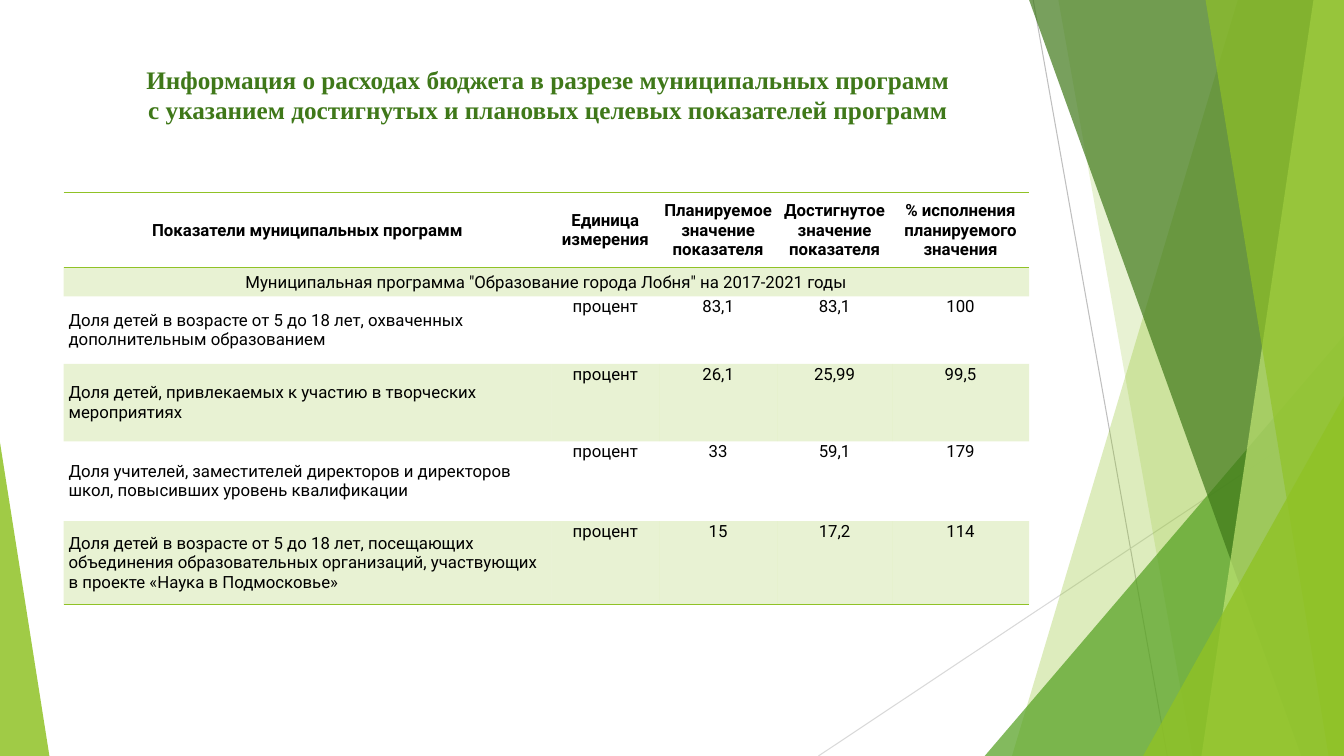
from dataclasses import dataclass

from lxml import etree
from pptx import Presentation
from pptx.dml.color import RGBColor
from pptx.enum import shapes, text
from pptx.oxml.ns import qn
from pptx.util import Pt


@dataclass(frozen=True)
class Theme:
    lime: str = "90C226"
    green: str = "54A021"
    dark: str = "3F7819"
    pale: str = "C0E474"
    gray: str = "BFBFBF"
    mist: str = "D9D9D9"
    ink: str = "000000"
    serif: str = "Times New Roman"
    sans: str = "Roboto"
    head: int = 18
    body: int = 12
    tint: int = 20


WIDE, HIGH = 960, 540
TITLE = ("Информация о расходах бюджета в разрезе муниципальных программ\v"
         "с указанием достигнутых и плановых целевых показателей программ")
HEADS = ["Показатели муниципальных программ", "Единица измерения",
         "Планируемое значение показателя", "Достигнутое значение показателя",
         "% исполнения планируемого значения"]
PROGRAM = 'Муниципальная программа "Образование города Лобня" на 2017-2021 годы'
GOALS = [
    ["Доля детей в возрасте от 5 до 18 лет, охваченных дополнительным образованием",
     "процент", "83,1", "83,1", "100"],
    ["Доля детей, привлекаемых к участию в творческих мероприятиях",
     "процент", "26,1", "25,99", "99,5"],
    ["Доля учителей, заместителей директоров и директоров школ, "
     "повысивших уровень квалификации",
     "процент", "33", "59,1", "179"],
    ["Доля детей в возрасте от 5 до 18 лет, посещающих объединения "
     "образовательных организаций, участвующих в проекте «Наука в Подмосковье»",
     "процент", "15", "17,2", "114"],
]
COLS = [348.5, 77, 84.2, 82.1, 97.9]
ROWS = [53.3, 20.9, 48.2, 55.4, 56.9, 59.8]


class Deck:
    def __init__(self, theme):
        self.theme = theme
        self.prs = Presentation()
        self.prs.slide_width, self.prs.slide_height = Pt(WIDE), Pt(HIGH)
        self.slide = self.prs.slides.add_slide(self.prs.slide_layouts[6])
        self.items = self.slide.shapes

    def paint(self, fill, color, alpha):
        """Fill with a colour at the given opacity in percent."""
        fill.solid()
        fill.fore_color.rgb = RGBColor.from_string(color)
        for node in fill._xPr.iter(qn("a:srgbClr")):
            if node.getparent().getparent() is fill._xPr:
                etree.SubElement(node, qn("a:alpha"), val=str(alpha * 1000))

    def finish(self, shape, color, alpha):
        shape.shadow.inherit = False
        shape.line.fill.background()
        self.paint(shape.fill, color, alpha)

    def line(self, start, end, color):
        link = self.items.add_connector(
            shapes.MSO_CONNECTOR.STRAIGHT, *map(Pt, (*start, *end)))
        link.line.color.rgb = RGBColor.from_string(color)
        link.line.width = Pt(0.75)
        etree.SubElement(link._element.spPr, qn("a:effectLst"))

    def blade(self, top, base, color, alpha):
        """Draw a full-height band from a slanted left edge to the slide's right."""
        pen = self.items.build_freeform(Pt(top), 0)
        pen.add_line_segments([(Pt(x), Pt(y)) for x, y in
                               ((WIDE, 0), (WIDE, HIGH), (base, HIGH))])
        self.finish(pen.convert_to_shape(), color, alpha)

    def wedge(self, left, top, width, tip, color, alpha):
        """Draw a triangle standing on the slide's bottom; tip is 0 to 1."""
        shape = self.items.add_shape(
            shapes.MSO_SHAPE.ISOSCELES_TRIANGLE,
            *map(Pt, (left, top, width, HIGH - top)))
        shape.adjustments[0] = tip
        self.finish(shape, color, alpha)

    def label(self, frame, words, face, size, color, bold, align):
        frame.text = words
        frame.word_wrap = True
        for para in frame.paragraphs:
            para.alignment = align
            for run in para.runs:
                font = run.font
                font.name, font.size, font.bold = face, Pt(size), bold
                font.color.rgb = RGBColor.from_string(color)

    def title(self, words, *box):
        frame = self.items.add_textbox(*map(Pt, box)).text_frame
        look = self.theme
        self.label(frame, words, look.serif, look.head, look.dark, True,
                   text.PP_ALIGN.CENTER)

    def edges(self, cell, ruled):
        """Rule the sides named in ruled and clear the others."""
        props = cell._tc.get_or_add_tcPr()
        for side in "LRTB":
            edge = etree.SubElement(props, qn(f"a:ln{side}"), w=str(Pt(1)))
            if side in ruled:
                fill = etree.SubElement(edge, qn("a:solidFill"))
                etree.SubElement(fill, qn("a:srgbClr"), val=self.theme.lime)
            else:
                etree.SubElement(edge, qn("a:noFill"))

    def cell(self, cell, words, bold, left, middle, ruled, tinted):
        look = self.theme
        pad = 3.6 if left else 0.7
        cell.margin_left = cell.margin_right = cell.margin_top = Pt(pad)
        cell.margin_bottom = Pt(pad if left else 0)
        cell.vertical_anchor = (text.MSO_ANCHOR.MIDDLE if middle
                                else text.MSO_ANCHOR.TOP)
        align = text.PP_ALIGN.LEFT if left else text.PP_ALIGN.CENTER
        self.label(cell.text_frame, words, look.sans, look.body, look.ink,
                   bold, align)
        self.edges(cell, ruled)
        if tinted:
            self.paint(cell.fill, look.lime, look.tint)
        else:
            cell.fill.background()

    def table(self, left, top, cols, rows, data):
        grid = self.items.add_table(
            len(rows), len(cols),
            *map(Pt, (left, top, sum(cols), sum(rows)))).table
        grid.first_row = grid.horz_banding = False
        for col, width in zip(grid.columns, cols):
            col.width = Pt(width)
        for row, height in zip(grid.rows, rows):
            row.height = Pt(height)
        rules = {0: "TB", 1: "T", len(rows) - 1: "B"}
        for r, line in enumerate(data):
            for c, words in enumerate(line):
                self.cell(grid.cell(r, c), words, bold=r == 0,
                          left=r > 1 and c == 0, middle=r < 2 or c == 0,
                          ruled=rules.get(r, ""), tinted=r % 2 == 1)
        grid.cell(1, 0).merge(grid.cell(1, len(cols) - 1))


def main():
    look = Theme()
    deck = Deck(look)
    deck.line((738, 0), (833.8, HIGH), look.gray)
    deck.line((WIDE, 290.2), (584.6, HIGH), look.mist)
    deck.blade(884.2, 722.9, look.lime, 30)
    deck.blade(756, 851.8, look.lime, 20)
    deck.wedge(703.4, 239.8, 256.6, 1, look.green, 72)
    deck.blade(735.1, 929.5, look.dark, 70)
    deck.blade(938.2, 858.2, look.pale, 70)
    deck.blade(861.1, 949, look.lime, 65)
    deck.wedge(816.5, 283, 143.5, 1, look.lime, 80)
    deck.wedge(0, 316.1, 35.3, 0, look.lime, 85)
    deck.title(TITLE, 46.1, 42.5, 690.5, 63.4)
    band = [PROGRAM] + [""] * (len(COLS) - 1)
    deck.table(45.4, 137.5, COLS, ROWS, [HEADS, band, *GOALS])
    deck.prs.save("out.pptx")


if __name__ == "__main__":
    main()
